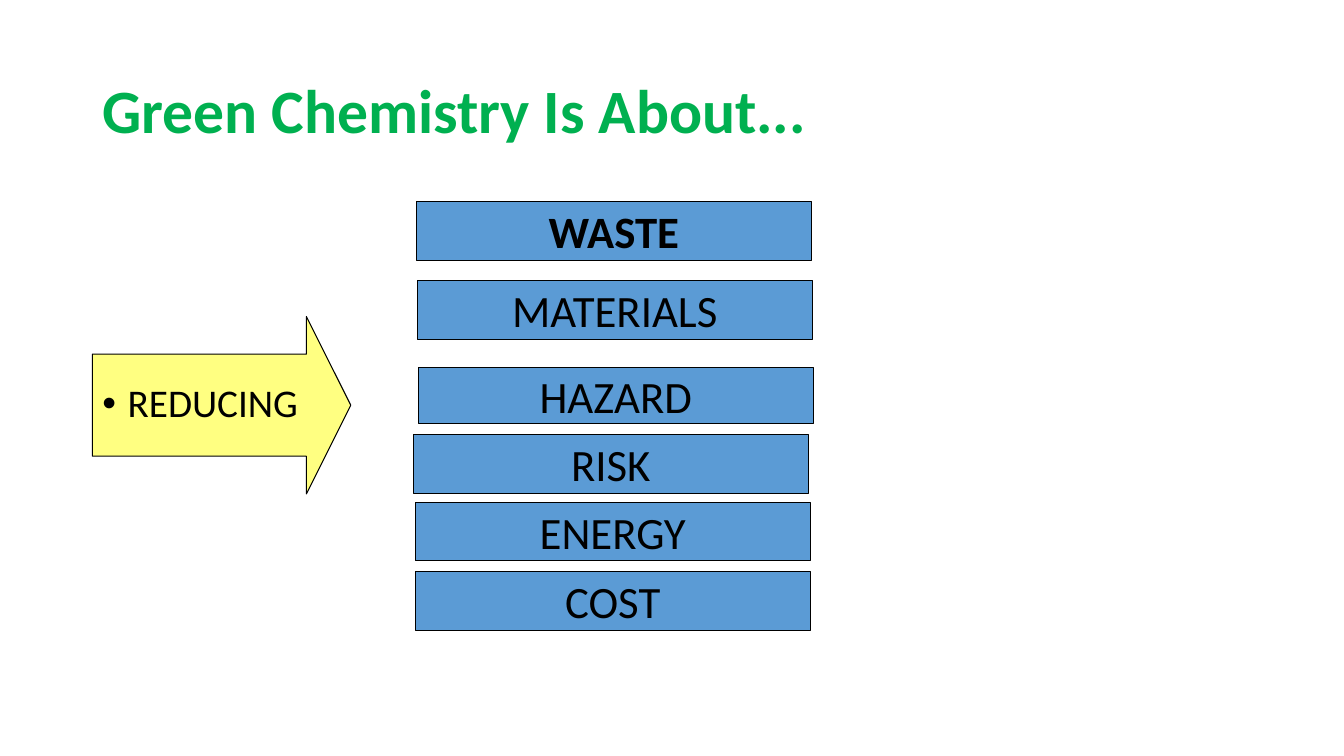
from lxml import etree
from pptx import Presentation
from pptx.dml.color import RGBColor
from pptx.enum import shapes, text
from pptx.oxml.ns import qn
from pptx.util import Pt

TITLE = "Green Chemistry Is About..."
ACTION = "REDUCING"
# label, left, top, height, bold
TARGETS = [
    ("WASTE", 297.4, 144, 42, True),
    ("MATERIALS", 298.1, 200.2, 42, False),
    ("HAZARD", 298.8, 262.8, 39.6, False),
    ("RISK", 295.2, 310.3, 42, False),
    ("ENERGY", 296.6, 358.6, 42, False),
    ("COST", 296.6, 408.2, 42, False),
]
TARGET_WIDTH = 282.2
COLOURS = {"title": "00B050", "arrow": "FFFF81", "target": "5B9BD5", "ink": "000000"}
FONT = "Calibri"


def colour(name):
    return RGBColor.from_string(COLOURS[name])


def place(shape, left, top, width, height):
    shape.left, shape.top = Pt(left), Pt(top)
    shape.width, shape.height = Pt(width), Pt(height)


def paint(shape, fill):
    shape.fill.solid()
    shape.fill.fore_color.rgb = colour(fill)
    shape.line.color.rgb = colour("ink")
    shape.line.width = Pt(0.75)


def write(shape, words, size, ink, align, bold=False, wrap=False):
    """Put one vertically centred run in the shape and return its paragraph."""
    frame = shape.text_frame
    frame.auto_size = text.MSO_AUTO_SIZE.NONE
    frame.word_wrap = wrap
    frame.vertical_anchor = text.MSO_ANCHOR.MIDDLE
    paragraph = frame.paragraphs[0]
    paragraph.alignment = align
    run = paragraph.add_run()
    run.text = words
    run.font.name, run.font.size, run.font.bold = FONT, Pt(size), bold
    run.font.color.rgb = colour(ink)
    return paragraph


def make_right_arrow(placeholder, shaft, head):
    """Give the placeholder an arrow outline; shaft and head are thousandths."""
    geometry = etree.SubElement(placeholder.element.spPr, qn("a:prstGeom"), prst="rightArrow")
    guides = etree.SubElement(geometry, qn("a:avLst"))
    for name, value in (("adj1", shaft), ("adj2", head)):
        etree.SubElement(guides, qn("a:gd"), name=name, fmla=f"val {value * 100}")


def main():
    presentation = Presentation()
    presentation.slide_width, presentation.slide_height = Pt(960), Pt(540)
    slide = presentation.slides.add_slide(presentation.slide_layouts[1])
    left, center = text.PP_ALIGN.LEFT, text.PP_ALIGN.CENTER

    title = slide.shapes.title
    place(title, 66, 28.8, 828, 104.4)
    write(title, TITLE, 44, "title", left, bold=True, wrap=True).line_spacing = 0.9

    arrow = slide.placeholders[1]
    place(arrow, 66, 226.1, 184.6, 126.7)
    make_right_arrow(arrow, 575, 250)
    paint(arrow, "arrow")
    paragraph = write(arrow, ACTION, 28, "ink", left)
    paragraph.line_spacing = 0.9
    paragraph.space_before = Pt(10)
    properties = paragraph._p.get_or_add_pPr()
    properties.set("marL", str(Pt(18)))
    properties.set("indent", str(-Pt(18)))
    etree.SubElement(properties, qn("a:buFont"), typeface="Arial")
    etree.SubElement(properties, qn("a:buChar"), char="•")

    for label, x, y, height, bold in TARGETS:
        box = slide.shapes.add_shape(
            shapes.MSO_SHAPE.RECTANGLE, Pt(x), Pt(y), Pt(TARGET_WIDTH), Pt(height))
        box.shadow.inherit = False
        paint(box, "target")
        write(box, label, 32, "ink", center, bold)

    presentation.save("out.pptx")


if __name__ == "__main__":
    main()
